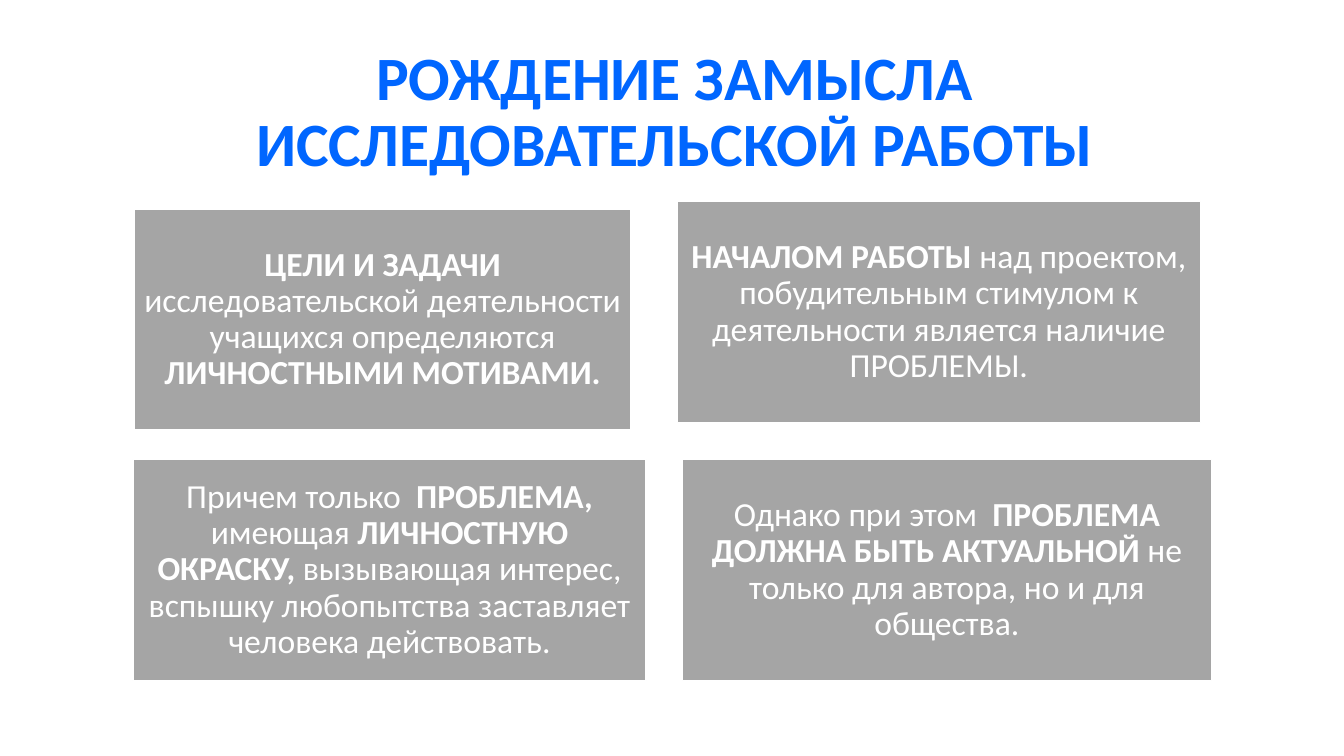
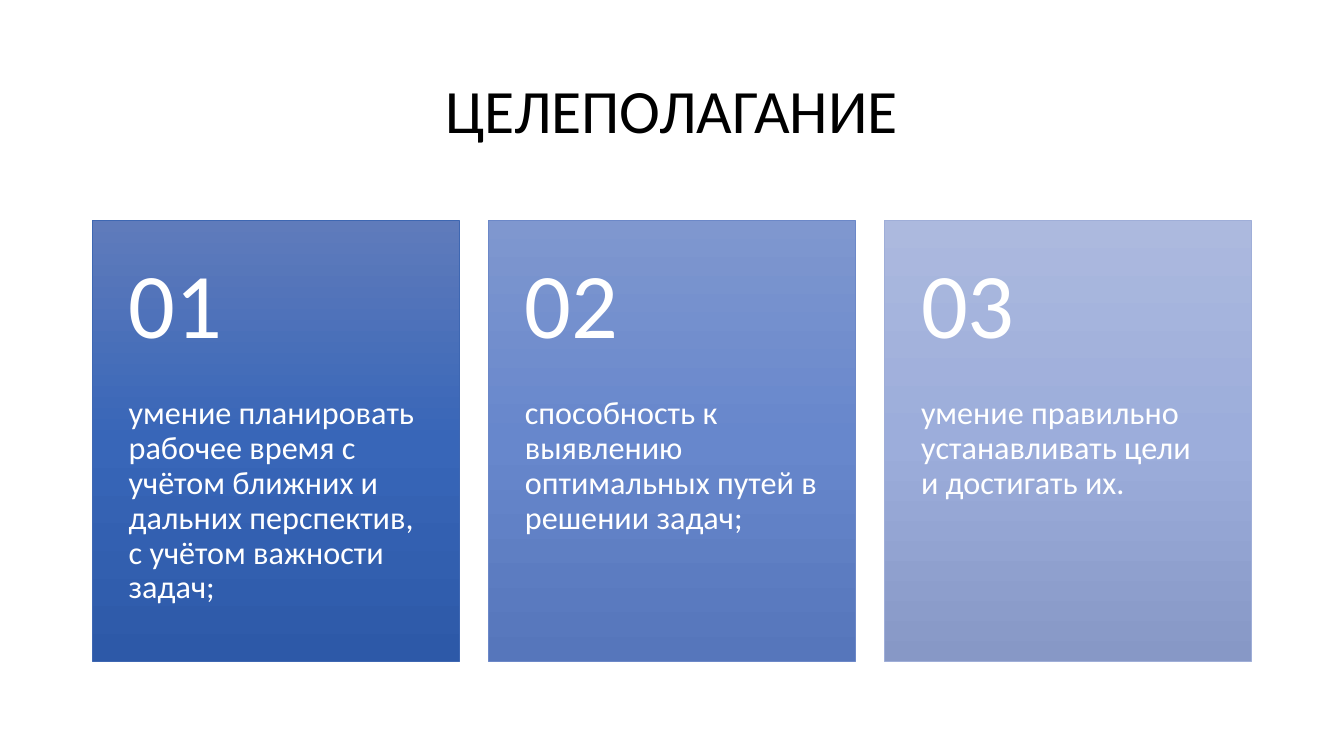
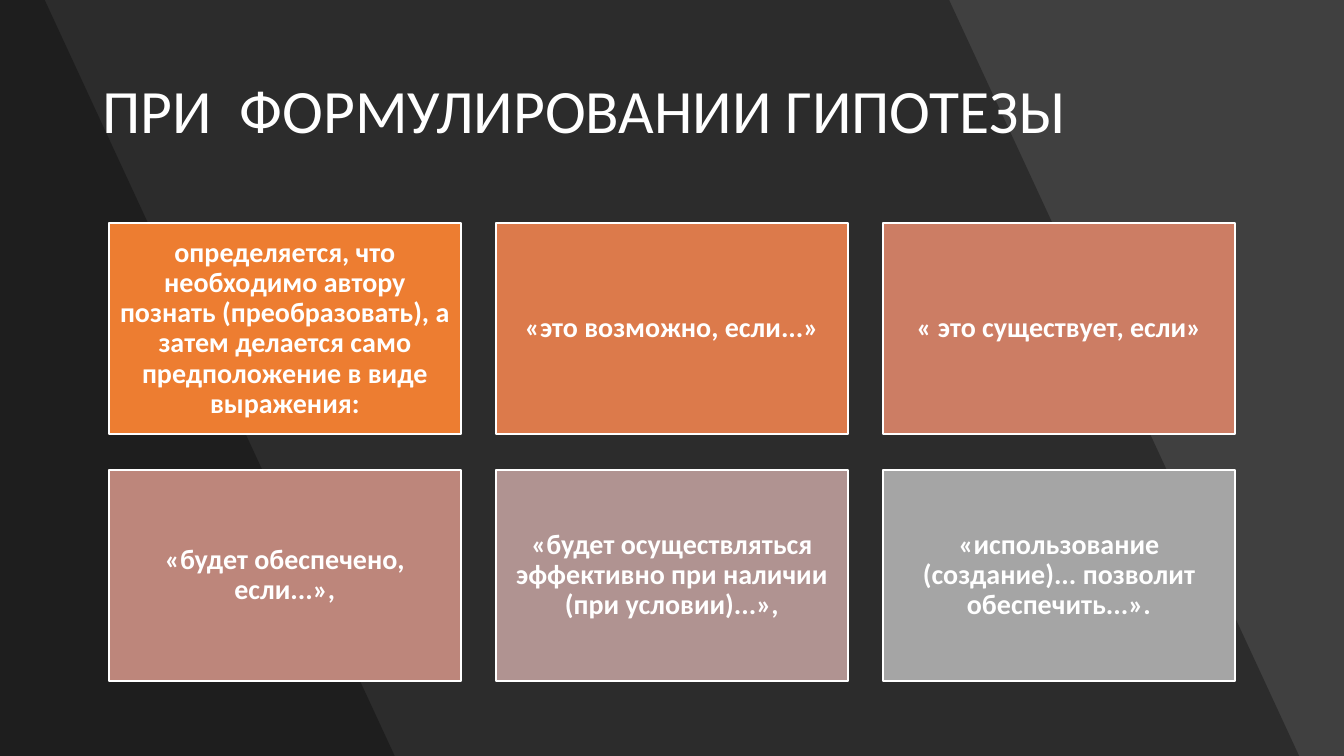
from copy import deepcopy

from lxml.etree import SubElement
from pptx import Presentation
from pptx.dml.color import RGBColor
from pptx.enum.shapes import MSO_SHAPE as SHAPE
from pptx.enum.text import MSO_ANCHOR as ANCHOR, MSO_AUTO_SIZE as FIT, PP_ALIGN as ALIGN
from pptx.oxml.ns import qn
from pptx.util import Pt

WHITE = RGBColor(0xFF, 0xFF, 0xFF)
BLACK = RGBColor(0x00, 0x00, 0x00)
BLUE = RGBColor(0x00, 0x66, 0xFF)
GRAY = RGBColor(0xA5, 0xA5, 0xA5)
CHARCOAL = RGBColor(0x40, 0x40, 0x40)
ORANGE = RGBColor(0xED, 0x7D, 0x31)
COPPER = RGBColor(0xDC, 0x7A, 0x4B)
CORAL = RGBColor(0xCC, 0x7D, 0x64)
ROSE = RGBColor(0xBD, 0x86, 0x7B)
MAUVE = RGBColor(0xB0, 0x93, 0x91)
DEEP = [RGBColor(0x5F, 0x7B, 0xBB), RGBColor(0x38, 0x66, 0xB8), RGBColor(0x2D, 0x59, 0xA8)]
MEDIUM = [RGBColor(0x7F, 0x97, 0xCF), RGBColor(0x67, 0x87, 0xCC), RGBColor(0x56, 0x76, 0xBB)]
PALE = [RGBColor(0xAC, 0xB9, 0xDE), RGBColor(0x9C, 0xAD, 0xDB), RGBColor(0x87, 0x98, 0xC6)]
DEEP_EDGE = RGBColor(0x3E, 0x67, 0xB2)
MEDIUM_EDGE = RGBColor(0x6C, 0x88, 0xC8)
PALE_EDGE = RGBColor(0x9F, 0xAE, 0xD8)


class Deck:
    """Shared style and the slide being built."""

    font = "Calibri"
    width, height = 960, 540

    def __init__(self):
        self.prs = Presentation()
        self.prs.slide_width, self.prs.slide_height = Pt(self.width), Pt(self.height)
        self.s = None

    def slide(self, background=WHITE):
        self.s = self.prs.slides.add_slide(self.prs.slide_layouts[5])
        fill = self.s.background.fill
        fill.solid()
        fill.fore_color.rgb = background

    def label(self, sp, text, size, color=WHITE, bold=False, align=ALIGN.CENTER,
              anchor=ANCHOR.MIDDLE, insets=(7.2, 7.2, 7.2, 7.2)):
        tf = sp.text_frame
        tf.word_wrap, tf.auto_size, tf.vertical_anchor = True, FIT.NONE, anchor
        tf.margin_left, tf.margin_top, tf.margin_right, tf.margin_bottom = map(Pt, insets)
        p = tf.paragraphs[0]
        p.alignment, p.line_spacing = align, 0.9
        p.font.name, p.font.size, p.font.bold = self.font, Pt(size), bold
        p.font.color.rgb = color
        for i, part in enumerate(text.split("*")):
            if part:
                r = p.add_run()
                r.text = part
                if i % 2:
                    r.font.bold = True

    def title(self, text, color, bold=False, align=ALIGN.CENTER, left=7.2):
        sp = self.s.shapes.title
        sp.left, sp.top, sp.width, sp.height = Pt(66), Pt(28.8), Pt(828), Pt(104.4)
        self.label(sp, text, 44, color, bold, align, insets=(left, 3.6, 7.2, 3.6))
        sp.element.getparent().append(sp.element)

    def rect(self, x, y, w, h, fill, edge=WHITE, weight=1):
        sp = self.s.shapes.add_shape(SHAPE.RECTANGLE, Pt(x), Pt(y), Pt(w), Pt(h))
        sp.shadow.inherit = False
        sp.line.color.rgb, sp.line.width = edge, Pt(weight)
        if isinstance(fill, list):
            self.shade(sp, fill)
        else:
            sp.fill.solid()
            sp.fill.fore_color.rgb = fill
        return sp

    def shade(self, sp, colors):
        sp.fill.gradient()
        sp.fill.gradient_angle = 270
        stops = sp.element.spPr.find(".//" + qn("a:gsLst"))
        stops.insert(1, deepcopy(stops[0]))
        for i, (stop, color) in enumerate(zip(sp.fill.gradient_stops, colors)):
            stop.position, stop.color.rgb = i / 2, color

    def text(self, x, y, w, h, text, size, **style):
        sp = self.s.shapes.add_textbox(Pt(x), Pt(y), Pt(w), Pt(h))
        self.label(sp, text, size, **style)

    def band(self, top, bottom):
        fb = self.s.shapes.build_freeform(0, 0)
        corners = [(top, 0), (bottom, self.height), (0, self.height)]
        fb.add_line_segments([(Pt(x), Pt(y)) for x, y in corners])
        sp = fb.convert_to_shape()
        sp.shadow.inherit = False
        sp.line.fill.background()
        sp.fill.solid()
        sp.fill.fore_color.rgb = BLACK
        color = sp.element.spPr.find(qn("a:solidFill"))[0]
        SubElement(color, qn("a:alpha")).set("val", "30000")


def add_idea(deck):
    deck.slide()
    deck.title("РОЖДЕНИЕ ЗАМЫСЛА ИССЛЕДОВАТЕЛЬСКОЙ РАБОТЫ", BLUE, bold=True, left=11.5)
    for x, y, w, text in [
        (95.8, 149.4, 355, "*ЦЕЛИ И ЗАДАЧИ *исследовательской деятельности учащихся "
                           "определяются *ЛИЧНОСТНЫМИ МОТИВАМИ.*"),
        (483.8, 144, 373.7, "*НАЧАЛОМ РАБОТЫ *над проектом, побудительным стимулом к "
                            "деятельности является наличие ПРОБЛЕМЫ."),
        (95, 328.3, 366.5, "Причем только  *ПРОБЛЕМА,* имеющая *ЛИЧНОСТНУЮ ОКРАСКУ, *"
                           "вызывающая интерес, вспышку любопытства заставляет "
                           "человека действовать."),
        (487.4, 328.3, 378, "Однако при этом  *ПРОБЛЕМА ДОЛЖНА БЫТЬ АКТУАЛЬНОЙ *"
                            "не только для автора, но и для общества."),
    ]:
        deck.label(deck.rect(x, y, w, 157.7, GRAY), text, 24)


def add_goals(deck):
    deck.slide()
    deck.title("ЦЕЛЕПОЛАГАНИЕ", BLACK)
    goals = [
        (DEEP, DEEP_EDGE, "умение планировать рабочее время с учётом ближних и дальних "
                          "перспектив, с учётом важности задач;"),
        (MEDIUM, MEDIUM_EDGE, "способность к выявлению оптимальных путей в решении задач;"),
        (PALE, PALE_EDGE, "умение правильно устанавливать цели и достигать их."),
    ]
    y, w, head, body = 157.7, 262, 126, 188.6
    for i, (fill, edge, text) in enumerate(goals):
        x = 66 + 283 * i
        deck.rect(x, y, w, head + body, fill, edge, 0.5)
        deck.text(x, y + head, w, body, text, 23, align=ALIGN.LEFT,
                  anchor=ANCHOR.TOP, insets=(25.9, 0, 25.9, 25.9))
        deck.text(x, y, w, head, f"{i + 1:02}", 66, align=ALIGN.LEFT,
                  insets=(25.9, 13, 25.9, 13))


def add_hypothesis(deck):
    deck.slide(CHARCOAL)
    deck.band(678, 928)
    deck.band(32, 282)
    cards = [
        (ORANGE, "определяется, что необходимо автору познать (преобразовать), а затем "
                 "делается само предположение в виде выражения:"),
        (COPPER, "«это возможно, если...»"),
        (CORAL, "« это существует, если»"),
        (ROSE, "«будет обеспечено, если...»,"),
        (MAUVE, "«будет осуществляться эффективно при наличии (при условии)...»,"),
        (GRAY, "«использование (создание)... позволит обеспечить...»."),
    ]
    for i, (fill, text) in enumerate(cards):
        row, col = divmod(i, 3)
        sp = deck.rect(77.8 + 276.5 * col, 159.1 + 176.4 * row, 251.3, 151.2, fill, weight=1.5)
        deck.label(sp, text, 20, bold=True, insets=(6, 6, 6, 6))
    deck.title("ПРИ  ФОРМУЛИРОВАНИИ ГИПОТЕЗЫ", WHITE, align=ALIGN.LEFT)


def main():
    deck = Deck()
    add_idea(deck)
    add_goals(deck)
    add_hypothesis(deck)
    deck.prs.save("out.pptx")


if __name__ == "__main__":
    main()
